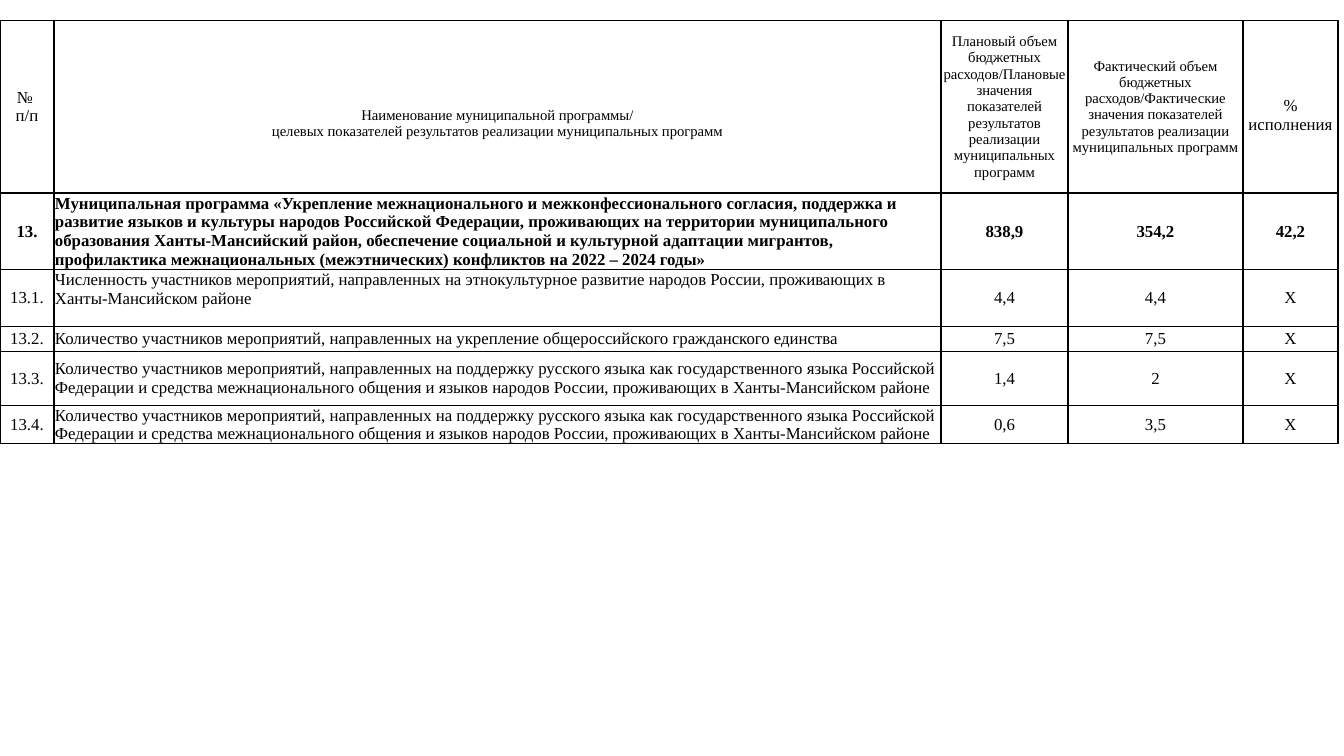
"""Builds a slide with the results table of a municipal programme."""
from lxml import etree
from pptx import Presentation
from pptx.dml import color
from pptx.enum import text
from pptx.oxml import ns
from pptx.util import Pt

FONT = "Times New Roman"
BLACK = "000000"
COLUMN_WIDTHS = [38.6, 633.6, 90.7, 125, 67.9]
ROW_HEIGHTS = [123.1, 54.4, 40.7, 17.9, 38.6, 27.2]

HEADERS = [
    (["№ ", "п/п"], 12, 0),
    (["Наименование муниципальной программы/",
      "целевых показателей результатов реализации муниципальных программ"], 10.5, 24),
    (["Плановый объем бюджетных расходов/Плановые значения показателей "
      "результатов реализации муниципальных программ"], 10.5, 0),
    (["Фактический объем бюджетных расходов/Фактические значения показателей "
      "результатов реализации муниципальных программ"], 10.5, 0),
    (["% исполнения"], 12, 12),
]
LANGUAGE_SUPPORT = (
    "Количество участников мероприятий, направленных на поддержку русского языка "
    "как государственного языка Российской Федерации и средства межнационального "
    "общения и языков народов России, проживающих в Ханты-Мансийском районе")
RESULTS = [
    ("13.", "Муниципальная программа «Укрепление межнационального и межконфессионального "
     "согласия, поддержка и развитие языков и культуры народов Российской Федерации, "
     "проживающих на территории муниципального образования Ханты-Мансийский район, "
     "обеспечение социальной и культурной адаптации мигрантов, профилактика "
     "межнациональных (межэтнических) конфликтов на 2022 – 2024 годы»",
     "838,9", "354,2", "42,2"),
    ("13.1.", "Численность участников мероприятий, направленных на этнокультурное развитие "
     "народов России, проживающих в Ханты-Мансийском районе", "4,4", "4,4", "Х"),
    ("13.2.", "Количество участников мероприятий, направленных на укрепление "
     "общероссийского гражданского единства", "7,5", "7,5", "Х"),
    ("13.3.", LANGUAGE_SUPPORT, "1,4", "2", "Х"),
    ("13.4.", LANGUAGE_SUPPORT, "0,6", "3,5", "Х"),
]


def rgb(value):
    """Return the colour for a hex string."""
    return color.RGBColor.from_string(value)


def add_borders(cell):
    """Draw a thin black line on each side of a cell."""
    properties = cell._tc.get_or_add_tcPr()
    for side in ("lnL", "lnR", "lnT", "lnB"):
        line = etree.SubElement(properties, ns.qn(f"a:{side}"), w=str(Pt(1)))
        fill = etree.SubElement(line, ns.qn("a:solidFill"))
        etree.SubElement(fill, ns.qn("a:srgbClr"), val=BLACK)


def set_margins(cell, side=0, top=0, bottom=0):
    """Set the inner margins of a cell in points."""
    cell.margin_left = cell.margin_right = Pt(side)
    cell.margin_top, cell.margin_bottom = Pt(top), Pt(bottom)


def fill_cell(cell, lines, size=12, bold=False, centred=True):
    """Write lines into one paragraph of a bordered, unfilled cell."""
    add_borders(cell)
    cell.fill.background()
    cell.vertical_anchor = text.MSO_ANCHOR.MIDDLE
    para = cell.text_frame.paragraphs[0]
    para.alignment = text.PP_ALIGN.CENTER if centred else text.PP_ALIGN.LEFT
    for index, line in enumerate(lines):
        if index:
            para.add_line_break()
        span = para.add_run()
        span.text = line
        span.font.name, span.font.size, span.font.bold = FONT, Pt(size), bold
        span.font.color.rgb = rgb(BLACK)


def add_grid(page):
    """Add the empty table with its column widths and row heights."""
    frame = page.shapes.add_table(
        len(ROW_HEIGHTS), len(COLUMN_WIDTHS), Pt(0), Pt(14.8),
        Pt(sum(COLUMN_WIDTHS)), Pt(sum(ROW_HEIGHTS)))
    table = frame.table
    table.first_row = table.horz_banding = False
    for column, width in zip(table.columns, COLUMN_WIDTHS):
        column.width = Pt(width)
    for row, height in zip(table.rows, ROW_HEIGHTS):
        row.height = Pt(height)
    return table


def main():
    """Build and save the slide."""
    deck = Presentation()
    deck.slide_width, deck.slide_height = Pt(960), Pt(540)
    page = deck.slides.add_slide(deck.slide_layouts[6])
    table = add_grid(page)
    for column, (lines, size, top) in enumerate(HEADERS):
        cell = table.cell(0, column)
        set_margins(cell, top=top)
        fill_cell(cell, lines, size)
    for row, result in enumerate(RESULTS, start=1):
        for column, value in enumerate(result):
            cell = table.cell(row, column)
            raised = result[0] == "13.1." and column == 1
            set_margins(cell, side=0.7, top=0.7, bottom=13 if raised else 0)
            fill_cell(cell, [value], bold=row == 1, centred=column != 1)
    deck.save("out.pptx")


if __name__ == "__main__":
    main()
